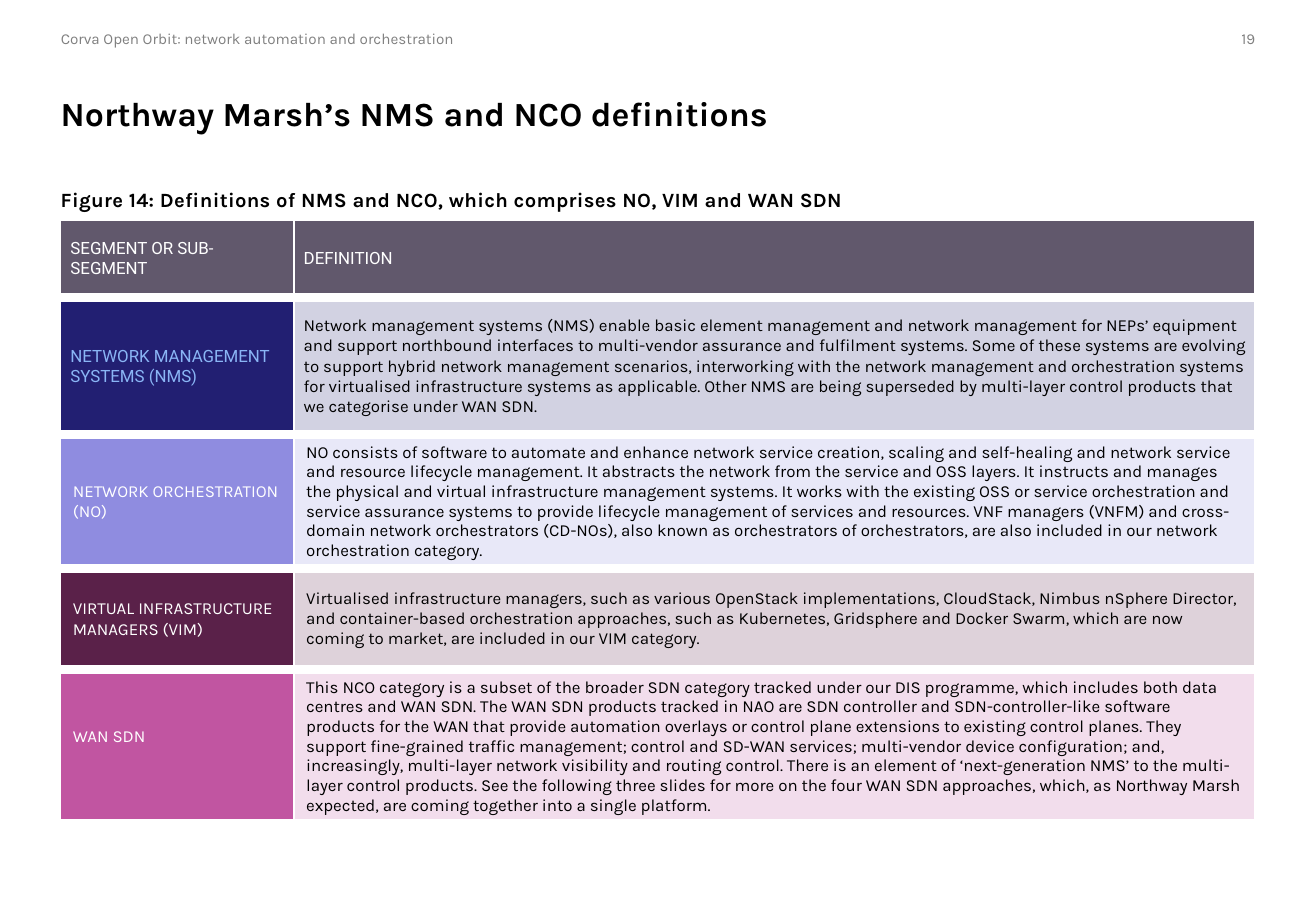
from dataclasses import dataclass

from lxml import etree
from pptx import Presentation
from pptx import util as u
from pptx.dml.color import RGBColor
from pptx.enum import text as t
from pptx.oxml import ns

# Content
HEADER = "Corva Open Orbit: network automation and orchestration"
PAGE = "19"
TITLE = "Northway Marsh’s NMS and NCO definitions"
CAPTION = "Figure 14: Definitions of NMS and NCO, which comprises NO, VIM and WAN SDN"
HEADINGS = ("SEGMENT OR SUB-SEGMENT", "DEFINITION")
SEGMENTS = [
    ("NETWORK MANAGEMENT SYSTEMS (NMS)",
     "Network management systems (NMS) enable basic element management and network "
     "management for NEPs’ equipment and support northbound interfaces to multi-vendor "
     "assurance and fulfilment systems. Some of these systems are evolving to support hybrid "
     "network management scenarios, interworking with the network management and "
     "orchestration systems for virtualised infrastructure systems as applicable. Other NMS "
     "are being superseded by multi-layer control products that we categorise under WAN SDN."),
    ("NETWORK ORCHESTRATION\v(NO)",
     "NO consists of software to automate and enhance network service creation, scaling and "
     "self-healing and network service and resource lifecycle management. It abstracts the "
     "network from the service and OSS layers. It instructs and manages the physical and "
     "virtual infrastructure management systems. It works with the existing OSS or service "
     "orchestration and service assurance systems to provide lifecycle management of services "
     "and resources. VNF managers (VNFM) and cross-domain network orchestrators (CD-NOs), also "
     "known as orchestrators of orchestrators, are also included in our network orchestration "
     "category."),
    ("VIRTUAL INFRASTRUCTURE MANAGERS (VIM)",
     "Virtualised infrastructure managers, such as various OpenStack implementations, "
     "CloudStack, Nimbus nSphere Director, and container-based orchestration approaches, such "
     "as Kubernetes, Gridsphere and Docker Swarm, which are now coming to market, are included "
     "in our VIM category."),
    ("WAN SDN",
     "This NCO category is a subset of the broader SDN category tracked under our DIS "
     "programme, which includes both data centres and WAN SDN. The WAN SDN products tracked in "
     "NAO are SDN controller and SDN-controller-like software products for the WAN that provide "
     "automation overlays or control plane extensions to existing control planes. They support "
     "fine-grained traffic management; control and SD-WAN services; multi-vendor device "
     "configuration; and, increasingly, multi-layer network visibility and routing control. "
     "There is an element of ‘next-generation NMS’ to the multi-layer control products. See the "
     "following three slides for more on the four WAN SDN approaches, which, as Northway Marsh "
     "expected, are coming together into a single platform."),
]


@dataclass(frozen=True)
class Theme:
    body: str = "Karla"
    caps: str = "Roboto"
    ink: str = "000000"
    muted: str = "7F7F7F"
    paper: str = "FFFFFF"
    heading: str = "61586C"
    sky: str = "8AB5F5"
    segments: tuple = ("221F72", "8F8CE0", "5A2149", "C155A1")
    tint: int = 20  # percent opacity behind a definition
    small: int = 9
    table: int = 10
    caption: int = 12
    title: int = 20
    thin: int = 1
    gap: int = 6


THEME = Theme()

# Grid, in inches
WIDTH, HEIGHT, MARGIN = 10.83, 7.5, 0.5
INNER = WIDTH - 2 * MARGIN
TABLE_TOP = 1.81
COLUMNS = (1.92, INNER - 1.92)
ROWS = (0.64, 1.13, 0.93, 0.83, 1.13)
TIGHT = (0.08, 0.08, 0.08)  # side, top and bottom insets
LOOSE = (0.1, 0.05, 0.05)
RAISED = (0.1, 0.05, 0.22)  # lifts the label by half a line

prs = Presentation()
prs.slide_width, prs.slide_height = u.Inches(WIDTH), u.Inches(HEIGHT)
slide = prs.slides.add_slide(prs.slide_layouts[6])


def style(paragraph, size, color, font=THEME.body, bold=False):
    for run in paragraph.runs:
        run.font.size, run.font.name, run.font.bold = u.Pt(size), font, bold
        run.font.color.rgb = RGBColor.from_string(color)


def add_line(words, left, top, width, height, size, color, bold=False, anchor=t.MSO_ANCHOR.MIDDLE):
    frame = slide.shapes.add_textbox(*map(u.Inches, (left, top, width, height))).text_frame
    frame.word_wrap, frame.vertical_anchor = True, anchor
    frame.margin_left = frame.margin_right = 0
    frame.text = words
    style(frame.paragraphs[0], size, color, bold=bold)
    return frame.paragraphs[0]


def set_borders(cell, top):
    widths = {"L": THEME.thin, "R": THEME.thin, "T": top, "B": THEME.gap}
    props = cell._tc.get_or_add_tcPr()
    for place, (side, width) in enumerate(widths.items()):
        line = etree.Element(ns.qn(f"a:ln{side}"), w=str(u.Pt(width)))
        fill = etree.SubElement(line, ns.qn("a:solidFill"))
        etree.SubElement(fill, ns.qn("a:srgbClr"), val=THEME.paper)
        props.insert(place, line)


def fill_cell(cell, words, fill, color, insets, font=THEME.body, tint=None,
              top=THEME.gap, spacing=u.Pt(12), after=2):
    side, upper, lower = map(u.Inches, insets)
    cell.margin_left = cell.margin_right = side
    cell.margin_top, cell.margin_bottom = upper, lower
    cell.vertical_anchor = t.MSO_ANCHOR.MIDDLE
    cell.fill.solid()
    cell.fill.fore_color.rgb = RGBColor.from_string(fill)
    if tint:
        shade = cell._tc.tcPr.find(".//" + ns.qn("a:srgbClr"))
        etree.SubElement(shade, ns.qn("a:alpha"), val=str(tint * 1000))
    set_borders(cell, top)
    paragraph = cell.text_frame.paragraphs[0]
    paragraph.text = words
    paragraph.line_spacing, paragraph.space_after = spacing, u.Pt(after)
    style(paragraph, THEME.table, color, font)


# Running header, title and caption
add_line(HEADER, MARGIN, 0.16, INNER * 0.6, 0.31, THEME.small, THEME.muted)
page = add_line(PAGE, WIDTH - MARGIN - 0.75, 0.16, 0.75, 0.31, THEME.small, THEME.muted)
page.alignment = t.PP_ALIGN.RIGHT
title = add_line(TITLE, MARGIN, 0.51, INNER, 0.83, THEME.title, THEME.ink, bold=True)
title.line_spacing = u.Pt(25)
caption = add_line(CAPTION, MARGIN, 1.49, INNER, 0.28, THEME.caption, THEME.ink,
                   bold=True, anchor=t.MSO_ANCHOR.TOP)
caption.runs[0]._r.get_or_add_rPr().set("spc", "20")

# Definitions table
table = slide.shapes.add_table(
    len(ROWS), len(COLUMNS),
    *map(u.Inches, (MARGIN, TABLE_TOP, INNER, sum(ROWS)))).table
table.first_row = table.horz_banding = False
for column, width in zip(table.columns, COLUMNS):
    column.width = u.Inches(width)
for row, height in zip(table.rows, ROWS):
    row.height = u.Inches(height)

for column, heading in enumerate(HEADINGS):
    fill_cell(table.cell(0, column), heading, THEME.heading, THEME.paper, TIGHT,
              font=THEME.caps, top=THEME.thin)

for row, ((label, definition), fill) in enumerate(zip(SEGMENTS, THEME.segments), start=1):
    first, last = row == 1, row == len(SEGMENTS)
    insets = TIGHT if first else LOOSE
    fill_cell(table.cell(row, 0), label, fill, THEME.sky if first else THEME.paper,
              RAISED if last else insets, font=THEME.caps if first else THEME.body)
    fill_cell(table.cell(row, 1), definition, fill, THEME.ink, insets, tint=THEME.tint,
              spacing=u.Pt(12) if first else None, after=2 if first else 4)

prs.save("out.pptx")
